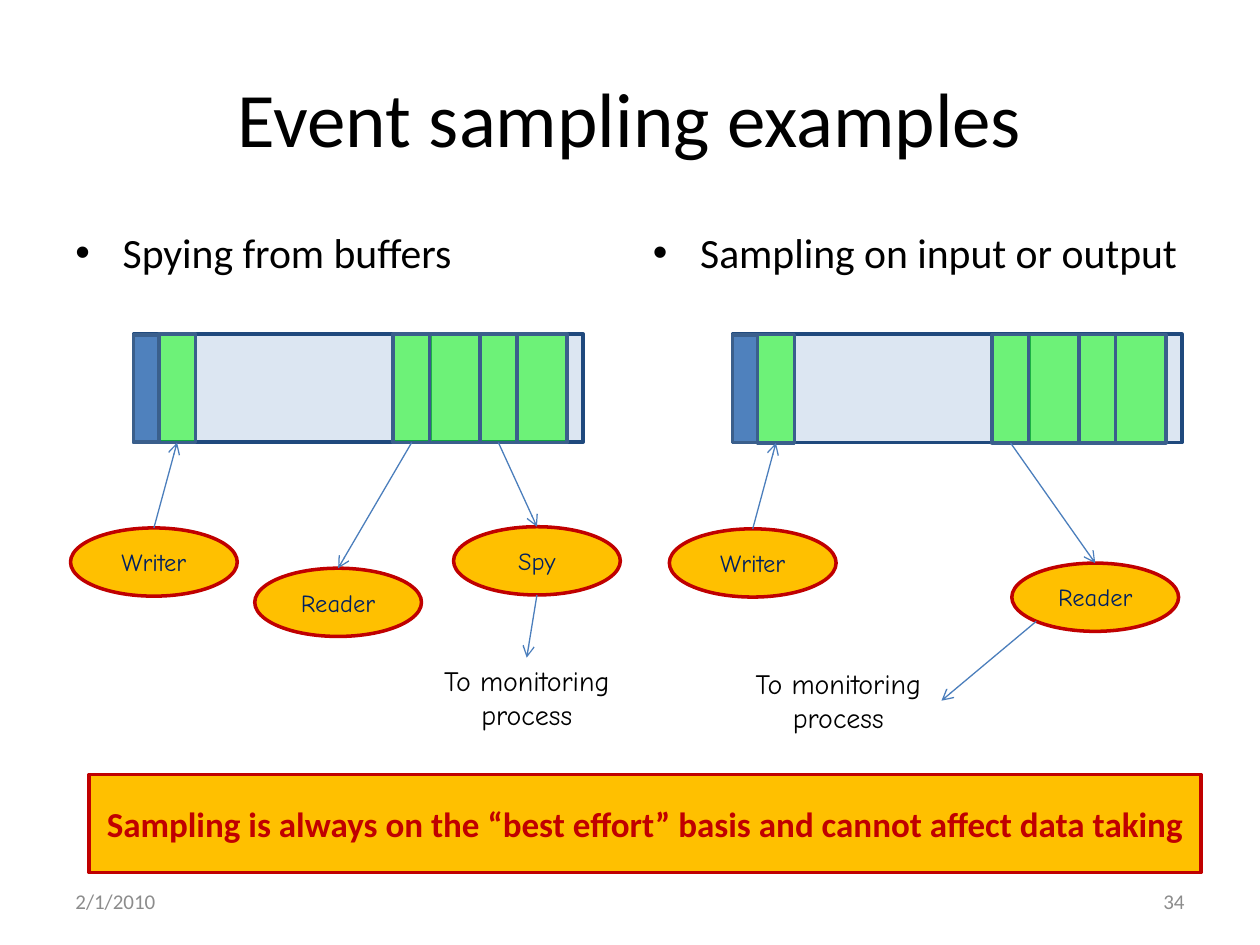
from dataclasses import dataclass
from math import sqrt

from lxml import etree
from pptx import Presentation
from pptx.dml.color import RGBColor
from pptx.enum.shapes import MSO_CONNECTOR, MSO_SHAPE
from pptx.enum.text import MSO_ANCHOR, PP_ALIGN
from pptx.oxml.ns import qn
from pptx.util import Pt

RECT, ELLIPSE = MSO_SHAPE.RECTANGLE, MSO_SHAPE.OVAL
STRAIGHT = MSO_CONNECTOR.STRAIGHT
TOP, MIDDLE = MSO_ANCHOR.TOP, MSO_ANCHOR.MIDDLE
LEFT, CENTER, RIGHT = PP_ALIGN.LEFT, PP_ALIGN.CENTER, PP_ALIGN.RIGHT
TOP_SIDE, BOTTOM_SIDE, RIGHT_SIDE = 0, 2, 3


@dataclass(frozen=True)
class Theme:
    body_font: str = "Calibri"
    label_font: str = "Comic Neue"
    title_size: float = 44
    bullet_size: float = 23.8
    banner_size: float = 20
    note_size: float = 16
    label_size: float = 14
    footer_size: float = 12
    black: str = "000000"
    grey: str = "8C8C8C"
    navy: str = "002060"
    red: str = "C00000"
    amber: str = "FFC000"
    buffer_fill: str = "DCE6F2"
    buffer_line: str = "1F497D"
    header_fill: str = "4F81BD"
    event_fill: str = "00FF00"
    slot_line: str = "3A5F8C"
    arrow: str = "4B7EBC"
    outline: float = 2
    arrow_width: float = 0.75


class Deck:
    """Draws on the current slide in the theme's style; lengths are points."""

    def __init__(self, theme, width, height):
        self.theme = theme
        self.presentation = Presentation()
        self.presentation.slide_width = Pt(width)
        self.presentation.slide_height = Pt(height)
        self.slide = None

    def new_slide(self):
        self.slide = self.presentation.slides.add_slide(self.presentation.slide_layouts[6])

    def fill_text(self, shape, lines, size, color, font, align, anchor=MIDDLE, bold=False,
                  bullet=False):
        frame = shape.text_frame
        frame.text = "\n".join(lines)
        frame.vertical_anchor = anchor
        for paragraph in frame.paragraphs:
            paragraph.alignment = align
            if bullet:
                properties = paragraph._p.get_or_add_pPr()
                properties.set("marL", str(Pt(27)))
                properties.set("indent", str(-Pt(27)))
                etree.SubElement(properties, qn("a:buFont"), typeface="Arial")
                etree.SubElement(properties, qn("a:buChar"), char="•")
            paragraph.font.size = Pt(size)
            paragraph.font.name = font
            paragraph.font.bold = bold
            paragraph.font.color.rgb = RGBColor.from_string(color)

    def text(self, box, lines, size, color, align, font=None, anchor=MIDDLE, wrap=True, bullet=False):
        area = self.slide.shapes.add_textbox(*map(Pt, box))
        area.text_frame.word_wrap = wrap
        self.fill_text(area, lines, size, color, font or self.theme.body_font, align, anchor,
                       bullet=bullet)
        return area

    def block(self, kind, box, fill, line, shapes=None, opacity=None):
        shape = (shapes or self.slide.shapes).add_shape(kind, *map(Pt, box))
        shape.shadow.inherit = False
        shape.fill.solid()
        shape.fill.fore_color.rgb = RGBColor.from_string(fill)
        if opacity is not None:
            color = shape._element.spPr.find(qn("a:solidFill"))[0]
            etree.SubElement(color, qn("a:alpha"), val=str(opacity * 1000))
        shape.line.color.rgb = RGBColor.from_string(line)
        shape.line.width = Pt(self.theme.outline)
        return shape

    def buffer(self, left, top):
        """Draws a buffer and returns its event slots from left to right."""
        theme = self.theme
        width, height, header_width = 257, 61.9, 14.4
        event_slots = [(14.4, 21), (148.3, 21.3), (169.3, 28.8), (198, 21), (219, 28.8)]
        shapes = self.slide.shapes.add_group_shape().shapes
        self.block(RECT, (left, top, width, height), theme.buffer_fill, theme.buffer_line, shapes)
        self.block(RECT, (left, top + 0.5, header_width, height - 0.5),
                   theme.header_fill, theme.slot_line, shapes)
        return [self.block(RECT, (left + offset, top + 0.2, slot_width, height),
                           theme.event_fill, theme.slot_line, shapes, opacity=50)
                for offset, slot_width in event_slots]

    def process(self, left, top, name):
        theme = self.theme
        bubble = self.block(ELLIPSE, (left, top, 95.3, 39), theme.amber, theme.red)
        self.fill_text(bubble, [name], theme.label_size, theme.navy, theme.label_font, CENTER)
        return bubble

    def monitoring_note(self, left, top):
        theme = self.theme
        return self.text((left, top, 118, 46), ["To monitoring", "process"], theme.note_size,
                         theme.black, CENTER, theme.label_font, TOP, wrap=False)

    def arrow(self, target, target_side, source=None, source_side=None, start=(0, 0)):
        """Joins source to target, or starts at a free point when source is None."""
        line = self.slide.shapes.add_connector(STRAIGHT, *start, 0, 0)
        if source is not None:
            line.begin_connect(source, source_side)
        line.end_connect(target, target_side)
        line.line.color.rgb = RGBColor.from_string(self.theme.arrow)
        line.line.width = Pt(self.theme.arrow_width)
        etree.SubElement(line.line._get_or_add_ln(), qn("a:tailEnd"), type="arrow")
        etree.SubElement(line._element.spPr, qn("a:effectLst"))

    def banner(self, box, message):
        theme = self.theme
        bar = self.block(RECT, box, theme.amber, theme.red)
        self.fill_text(bar, [message], theme.banner_size, theme.red, theme.body_font, CENTER,
                       bold=True)

    def save(self):
        self.presentation.save("out.pptx")


def ellipse_point(ellipse, x, y):
    """Returns the outline point in direction (x, y), a unit vector."""
    return (int(ellipse.left + ellipse.width / 2 * (1 + x)),
            int(ellipse.top + ellipse.height / 2 * (1 + y)))


def main():
    theme = Theme()
    deck = Deck(theme, 720, 540)
    deck.new_slide()

    deck.text((36, 21.6, 648, 90), ["Event sampling examples"], theme.title_size, theme.black, CENTER)
    for left, heading in ((36, "Spying from buffers"), (366, "Sampling on input or output")):
        deck.text((left, 126, 318, 42.5), [heading], theme.bullet_size, theme.black, LEFT,
                  anchor=TOP, bullet=True)

    # Spying: a separate process looks into the buffer
    written, read, _, spied, _ = deck.buffer(76.3, 190.8)
    writer = deck.process(40.3, 301.7, "Writer")
    spy = deck.process(259.2, 301, "Spy")
    reader = deck.process(145.6, 324.7, "Reader")
    spy_note = deck.monitoring_note(242, 375.8)
    deck.arrow(written, BOTTOM_SIDE, writer, TOP_SIDE)
    deck.arrow(reader, TOP_SIDE, read, BOTTOM_SIDE)
    deck.arrow(spy, TOP_SIDE, spied, BOTTOM_SIDE)
    deck.arrow(spy_note, TOP_SIDE, start=ellipse_point(spy, 0, 1))

    # Sampling: the reader itself passes events on
    written, read, *_ = deck.buffer(418.5, 191)
    writer = deck.process(382.5, 302.2, "Writer")
    reader = deck.process(578.2, 321.8, "Reader")
    reader_note = deck.monitoring_note(420, 377.4)
    deck.arrow(written, BOTTOM_SIDE, writer, TOP_SIDE)
    deck.arrow(reader, TOP_SIDE, read, BOTTOM_SIDE)
    diagonal = sqrt(0.5)
    deck.arrow(reader_note, RIGHT_SIDE, start=ellipse_point(reader, -diagonal, diagonal))

    deck.banner((51, 442.6, 635.4, 56),
                "Sampling is always on the “best effort” basis and cannot affect data taking")
    for left, footer, align in ((36, "2/1/2010", LEFT), (516, "34", RIGHT)):
        deck.text((left, 500.5, 168, 28.8), [footer], theme.footer_size, theme.grey, align)
    deck.save()


if __name__ == "__main__":
    main()
